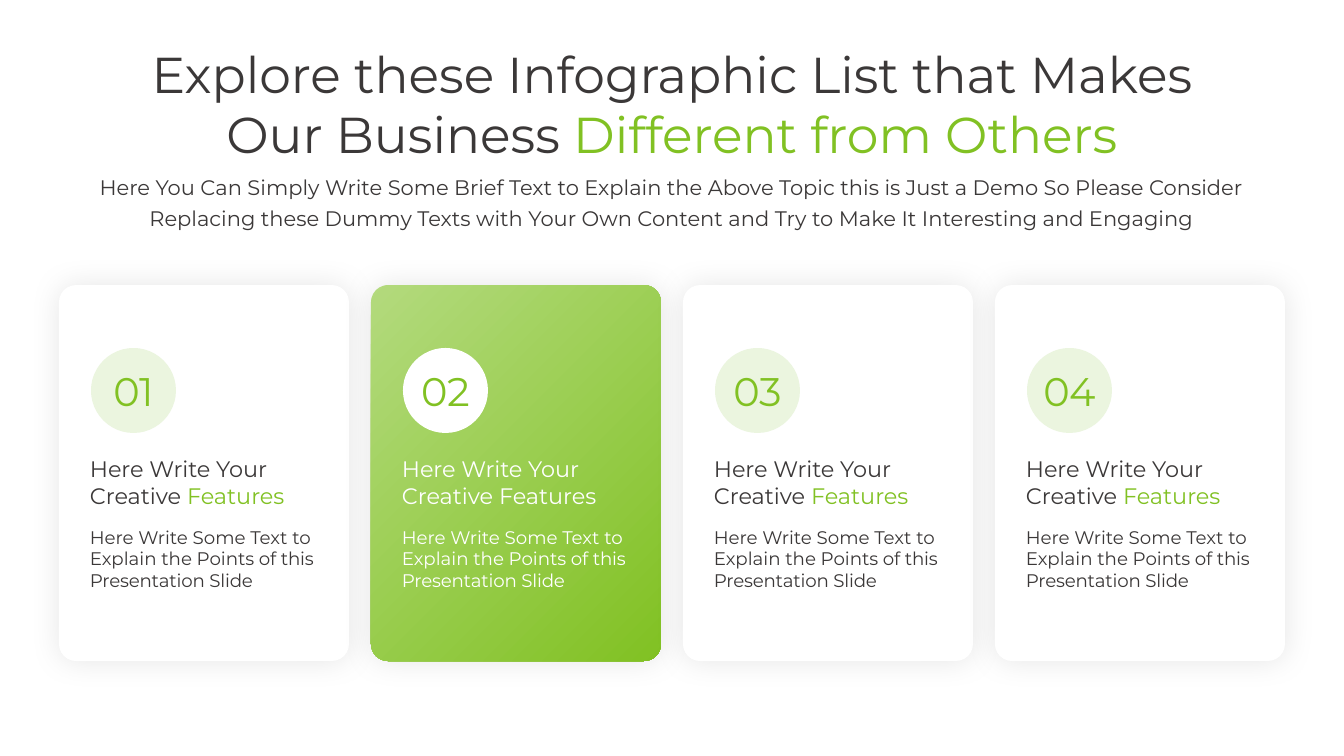
"""Build a slide with four numbered feature cards under a centred heading."""
from dataclasses import dataclass
from typing import Optional

from pptx import Presentation
from pptx.dml.color import RGBColor
from pptx.enum.shapes import MSO_SHAPE as Preset
from pptx.enum.text import MSO_AUTO_SIZE as AutoSize, PP_ALIGN as Align
from pptx.oxml import parse_xml
from pptx.oxml.ns import nsdecls, qn
from pptx.util import Emu, Pt

FONT = "Montserrat"
DARK, WHITE = "3B3838", "FFFFFF"
GREEN, LIGHT_GREEN = "81C123", "B3DA7D"
PALE, PALER = "EBF5DF", "ECF6E2"

SLIDE_WIDTH, SLIDE_HEIGHT = 1344, 756
SCALE = 12192000 / SLIDE_WIDTH
CARD_LEFT, CARD_TOP, CARD_PITCH = 59, 285, 312
CARD_WIDTH, CARD_HEIGHT = 290, 376


@dataclass(frozen=True)
class Frame:
    left: int
    top: int
    width: int
    height: int


@dataclass(frozen=True)
class Span:
    text: str
    color: str
    spacing: int = 0


@dataclass(frozen=True)
class TextStyle:
    size: float
    align: Optional[Align] = None
    leading: Optional[int] = None


@dataclass(frozen=True)
class Card:
    number: str
    highlighted: bool = False


TITLE = TextStyle(36, Align.CENTER)
SUBTITLE = TextStyle(15, Align.CENTER, 22)
NUMBER = TextStyle(28.5, Align.CENTER)
FEATURE = TextStyle(16)
BODY = TextStyle(13)
CARDS = [Card("01"), Card("02", True), Card("03"), Card("04")]


def px(length: int) -> Emu:
    """Turn px into EMU."""
    return Emu(round(length * SCALE))


def rgb(color: str) -> RGBColor:
    """Turn a hex string into a colour."""
    return RGBColor.from_string(color)


def place(frame: Frame) -> tuple:
    """Give the position and size of a frame in EMU."""
    return px(frame.left), px(frame.top), px(frame.width), px(frame.height)


def add_text(parent, frame: Frame, style: TextStyle, lines: list) -> None:
    """Add a text box with one paragraph per list of spans."""
    box = parent.add_textbox(*place(frame))
    text_frame = box.text_frame
    text_frame.word_wrap = False
    text_frame.auto_size = AutoSize.SHAPE_TO_FIT_TEXT
    for index, spans in enumerate(lines):
        para = text_frame.add_paragraph() if index else text_frame.paragraphs[0]
        para.alignment = style.align
        if style.leading:
            para.line_spacing = Pt(style.leading)
        for span in spans:
            run = para.add_run()
            run.text = span.text
            run.font.name = FONT
            run.font.size = Pt(style.size)
            run.font.color.rgb = rgb(span.color)
            if span.spacing:
                run._r.get_or_add_rPr().set("spc", str(span.spacing))


def add_shape(parent, preset: Preset, frame: Frame, *colors: str):
    """Add an unlined shape with a solid or a two-colour gradient fill."""
    shape = parent.add_shape(preset, *place(frame))
    shape.shadow.inherit = False
    shape.line.fill.background()
    if len(colors) == 1:
        shape.fill.solid()
        shape.fill.fore_color.rgb = rgb(colors[0])
    else:
        shape.fill.gradient()
        shape.fill.gradient_angle = 45
        for stop, color in zip(shape.fill.gradient_stops, colors):
            stop.color.rgb = rgb(color)
    return shape


def make_radial(shape) -> None:
    """Spread the gradient in circles from the bottom right corner."""
    gradient = shape._element.spPr.find(qn("a:gradFill"))
    gradient.replace(gradient.find(qn("a:lin")), parse_xml(
        f'<a:path {nsdecls("a")} path="circle">'
        '<a:fillToRect l="100000" t="100000"/></a:path>'))
    gradient.append(parse_xml(
        f'<a:tileRect {nsdecls("a")} r="-100000" b="-100000"/>'))


def add_glow_shadow(shape) -> None:
    """Give the shape a soft shadow on all sides."""
    effects = shape._element.spPr.find(qn("a:effectLst"))
    effects.append(parse_xml(
        f'<a:outerShdw {nsdecls("a")} blurRad="{Pt(22)}" dist="0" dir="0" '
        'algn="ctr" rotWithShape="0"><a:srgbClr val="000000">'
        '<a:alpha val="10000"/></a:srgbClr></a:outerShdw>'))


def add_card(page, card: Card, left: int) -> None:
    """Add one grouped card with its number, feature and description."""
    group = page.shapes.add_group_shape().shapes
    ink, accent = (WHITE, WHITE) if card.highlighted else (DARK, GREEN)
    panel_colors = (GREEN, LIGHT_GREEN) if card.highlighted else (WHITE,)
    badge_colors = (WHITE,) if card.highlighted else (PALE, PALER)

    panel = add_shape(group, Preset.ROUNDED_RECTANGLE,
                      Frame(left, CARD_TOP, CARD_WIDTH, CARD_HEIGHT), *panel_colors)
    panel.adjustments[0] = 0.059
    add_glow_shadow(panel)
    if card.highlighted:
        make_radial(panel)

    add_text(group, Frame(left + 21, 450, 234, 66), FEATURE, [
        [Span("Here Write Your", ink)],
        [Span("Creative ", ink), Span("Features", accent)],
    ])
    add_shape(group, Preset.OVAL, Frame(left + 32, 348, 85, 85), *badge_colors)
    add_text(group, Frame(left + 32, 362, 85, 58), NUMBER,
             [[Span(card.number, GREEN, -30)]])
    add_text(group, Frame(left + 21, 521, 248, 77), BODY, [
        [Span("Here Write Some Text to", ink)],
        [Span("Explain the Points ", ink), Span("of this", ink, -10)],
        [Span("Presentation Slide", ink, -10)],
    ])


def main() -> None:
    """Build and save the deck."""
    deck = Presentation()
    deck.slide_width, deck.slide_height = px(SLIDE_WIDTH), px(SLIDE_HEIGHT)
    page = deck.slides.add_slide(deck.slide_layouts[6])
    add_text(page.shapes, Frame(95, 38, 1154, 132), TITLE, [
        [Span("Explore these Infographic List that Makes", DARK)],
        [Span("Our Business ", DARK), Span("Different from Others", GREEN)],
    ])
    add_text(page.shapes, Frame(68, 164, 1207, 70), SUBTITLE, [
        [Span("Here You Can Simply Write Some Brief Text to Explain the Above "
              "Topic this is Just a Demo So Please Consider", DARK)],
        [Span("Replacing these Dummy Texts with Your Own Content and Try to "
              "Make It Interesting and Engaging", DARK)],
    ])
    for index, card in enumerate(CARDS):
        add_card(page, card, CARD_LEFT + index * CARD_PITCH)
    deck.save("out.pptx")


if __name__ == "__main__":
    main()
